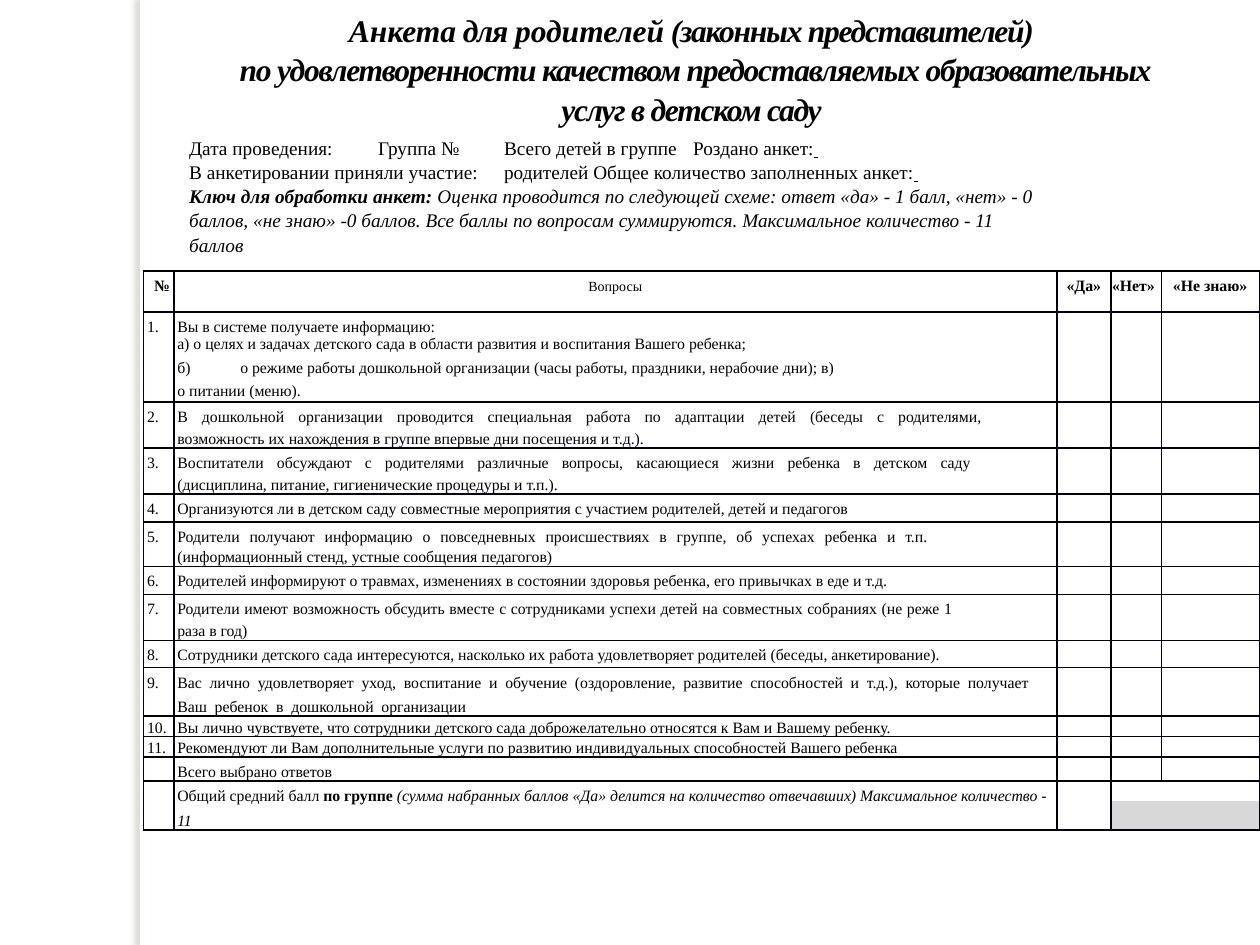
from dataclasses import dataclass

from lxml.etree import SubElement
from pptx import Presentation
from pptx.dml.color import RGBColor
from pptx.enum.shapes import MSO_SHAPE
from pptx.enum.text import MSO_ANCHOR, MSO_AUTO_SIZE, PP_ALIGN
from pptx.oxml.ns import qn
from pptx.util import Pt


@dataclass(frozen=True)
class Theme:
    font: str = "Times New Roman"
    text: str = "000000"
    paper: str = "FFFFFF"
    border: str = "000009"
    shade: str = "D8D8D8"
    shadow: str = "736F63"
    title_size: float = 18
    info_size: float = 11
    table_size: float = 9
    heading_size: float = 8


THEME = Theme()

TITLE_LINES = [
    [("Анкета", 0), (" для ", -0.7), ("родителей", 0), (" (законных представителей) ", -0.7)],
    [("по удовлетворенности качеством предоставляемых образовательных услуг в детском саду ", -0.7)],
]

# Each line: tab stops and its pieces of text with their style
INFO_LINES = [
    ([188.6, 299.5, 449.3, 589.7],
     [("Дата проведения:", ""), ("\t", "u"), ("Группа №", ""), ("\t", "u"),
      ("Всего детей в группе", ""), ("\t", "u"), ("Роздано анкет:", ""), (" \t", "u")]),
    ([294.5, 629.3],
     [("В анкетировании приняли участие:", ""), ("\t", "u"),
      ("родителей Общее количество заполненных анкет:", ""), (" \t", "u")]),
    ([],
     [("Ключ для обработки анкет: ", "bi"),
      ("Оценка проводится по следующей схеме: ответ «да» - 1 балл, «нет» - 0\v"
       "баллов, «не знаю» -0 баллов. Все баллы по вопросам суммируются. "
       "Максимальное количество - 11\vбаллов", "i")]),
]

# Heading, left indent, alignment, size
HEADINGS = [
    ("№", 6, PP_ALIGN.LEFT), ("Вопросы", 0, PP_ALIGN.CENTER), ("«Да»", 5.5, PP_ALIGN.LEFT),
    ("«Нет»", 0.5, PP_ALIGN.LEFT), ("«Не знаю»", 6.5, PP_ALIGN.LEFT),
]

# Each question: row height, then paragraphs of (text, line spacing, extra word gap)
QUESTIONS = [
    (51.4, [("Вы в системе получаете информацию:", 13.6, 0),
            ("а) о целях и задачах детского сада в области развития и воспитания Вашего ребенка;", None, 0),
            ("б)\tо режиме работы дошкольной организации (часы работы, праздники, нерабочие дни); "
             "в)\vо питании (меню).", 13.5, 0)]),
    (26.3, [("В дошкольной организации проводится специальная работа по адаптации детей "
             "(беседы с родителями,", 13.5, 5.8),
            ("возможность их нахождения в группе впервые дни посещения и т.д.).", 12.8, 0)]),
    (26.3, [("Воспитатели обсуждают с родителями различные вопросы, касающиеся жизни ребенка "
             "в детском саду", 13.6, 5.3),
            ("(дисциплина, питание, гигиенические процедуры и т.п.).", 12.5, 0)]),
    (16, [("Организуются ли в детском саду совместные мероприятия с участием родителей, "
           "детей и педагогов", 13.7, 0)]),
    (25.2, [("Родители получают информацию о повседневных происшествиях в группе, "
             "об успехах ребенка и т.п.", 13.6, 3.4),
            ("(информационный стенд, устные сообщения педагогов)", 11.8, 0)]),
    (16, [("Родителей информируют о травмах, изменениях в состоянии здоровья ребенка, "
           "его привычках в еде и т.д.", 13.6, 0)]),
    (26.3, [("Родители имеют возможность обсудить вместе с сотрудниками успехи детей "
             "на совместных собраниях (не реже 1", 13.6, 0.4),
            ("раза в год)", 12.6, 0)]),
    (15.6, [("Сотрудники детского сада интересуются, насколько их работа удовлетворяет родителей "
             "(беседы, анкетирование).", 13.6, 0)]),
    (27.6, [("Вас лично удовлетворяет уход, воспитание и обучение (оздоровление, развитие "
             "способностей и т.д.), которые получает Ваш ребенок в дошкольной организации", 13.8, 2.2)]),
    (11.8, [("Вы лично чувствуете, что сотрудники детского сада доброжелательно относятся "
             "к Вам и Вашему ребенку.", 11.7, 0)]),
    (11.7, [("Рекомендуют ли Вам дополнительные услуги по развитию индивидуальных способностей "
             "Вашего ребенка", 11.7, 0)]),
    (13.7, [("Всего выбрано ответов", 13.7, 0)]),
]
AVERAGE = [
    ("Общий средний балл ", ""), ("по группе ", "b"),
    ("(сумма набранных баллов «Да» делится на количество отвечавших) Максимальное количество - 11", "i"),
]
COLUMN_WIDTHS = [17.3, 504.7, 31, 28.8, 56.2]
HEADER_HEIGHT = 23.4
AVERAGE_HEIGHTS = [11.4, 16.4]
CELL_INDENT = 2


def color(value):
    return RGBColor.from_string(value)


def place(shape, box):
    shape.left, shape.top, shape.width, shape.height = map(Pt, box)


def format_paragraph(paragraph, size, indent=0, spacing=None, tabs=(), align=PP_ALIGN.LEFT, **style):
    paragraph.alignment = align
    if spacing:
        paragraph.line_spacing = spacing
    properties = paragraph._p.get_or_add_pPr()
    properties.set("marL", str(Pt(indent)))
    properties.set("indent", "0")
    if tabs:
        tab_list = SubElement(properties, qn("a:tabLst"))
        for position in tabs:
            SubElement(tab_list, qn("a:tab"), pos=str(Pt(position)), algn="l")
    font = paragraph.font
    font.name, font.size = THEME.font, Pt(size)
    font.color.rgb = color(THEME.text)
    for name, value in style.items():
        setattr(font, name, value)


def add_text(paragraph, text, style="", letter_gap=0):
    """Add text as runs, where a vertical tab starts a new line."""
    for number, line in enumerate(text.split("\v")):
        if number:
            paragraph.add_line_break()
        run = paragraph.add_run()
        run.text = line
        for key, name in (("b", "bold"), ("i", "italic"), ("u", "underline")):
            if key in style:
                setattr(run.font, name, True)
        if letter_gap:
            run._r.get_or_add_rPr().set("spc", str(round(letter_gap * 100)))


def add_spread_text(paragraph, text, word_gap):
    """Widen only the spaces between words."""
    if not word_gap:
        return add_text(paragraph, text)
    for number, word in enumerate(text.split(" ")):
        if number:
            add_text(paragraph, " ", letter_gap=word_gap)
        add_text(paragraph, word)


def paragraphs_for(text_frame, items):
    for number, item in enumerate(items):
        yield (text_frame.add_paragraph() if number else text_frame.paragraphs[0]), item


def add_side_bar(slide, box):
    bar = slide.shapes.add_shape(MSO_SHAPE.RECTANGLE, *map(Pt, box))
    bar.fill.solid()
    bar.fill.fore_color.rgb = color(THEME.paper)
    bar.line.fill.background()
    bar.shadow.inherit = False
    effects = bar._element.spPr.find(qn("a:effectLst"))
    shadow = SubElement(effects, qn("a:outerShdw"), blurRad=str(Pt(3)), dist=str(Pt(3)), dir="10800000")
    tone = SubElement(shadow, qn("a:srgbClr"), val=THEME.shadow)
    SubElement(tone, qn("a:alpha"), val="25000")


def fill_title(slide, box):
    title = slide.shapes.title
    place(title, box)
    frame = title.text_frame
    frame.auto_size, frame.vertical_anchor = MSO_AUTO_SIZE.NONE, MSO_ANCHOR.TOP
    for paragraph, pieces in paragraphs_for(frame, TITLE_LINES):
        format_paragraph(paragraph, THEME.title_size, spacing=1.05, align=PP_ALIGN.CENTER,
                         bold=True, italic=True)
        for text, gap in pieces:
            add_text(paragraph, text, letter_gap=gap)


def add_info(slide, box):
    frame = slide.shapes.add_textbox(*map(Pt, box)).text_frame
    frame.word_wrap = True
    for paragraph, (tabs, pieces) in paragraphs_for(frame, INFO_LINES):
        format_paragraph(paragraph, THEME.info_size, 64, 1.05, tabs)
        for text, style in pieces:
            add_text(paragraph, text, style)


def format_cell(cell, fill=None, sides="LRTB"):
    cell.margin_left = cell.margin_right = cell.margin_top = cell.margin_bottom = 0
    properties = cell._tc.get_or_add_tcPr()
    for side in "LRTB":
        line = SubElement(properties, qn(f"a:ln{side}"), w=str(Pt(1)))
        if side in sides:
            SubElement(SubElement(line, qn("a:solidFill")), qn("a:srgbClr"), val=THEME.border)
        else:
            SubElement(line, qn("a:noFill"))
    if fill:
        cell.fill.solid()
        cell.fill.fore_color.rgb = color(fill)
    else:
        cell.fill.background()
    # Small type keeps empty cells from stretching their row
    cell.text_frame.paragraphs[0]._p.get_or_add_endParaRPr().set("sz", "800")


def add_questionnaire(slide, box):
    heights = [HEADER_HEIGHT] + [height for height, _ in QUESTIONS] + AVERAGE_HEIGHTS
    frame = slide.shapes.add_table(len(heights), len(COLUMN_WIDTHS), *map(Pt, box))
    table = frame.table
    table.horz_banding = table.first_row = False
    for column, width in zip(table.columns, COLUMN_WIDTHS):
        column.width = Pt(width)
    for row, height in zip(table.rows, heights):
        row.height = Pt(height)

    # Fills and borders; the two score cells at the bottom right have no line between them
    last = len(heights) - 1
    special = {last - 1: (THEME.paper, "LRT"), last: (THEME.shade, "LRB")}
    for row in range(len(heights)):
        for column in range(len(COLUMN_WIDTHS)):
            look = special.get(row, ()) if column > 2 else ()
            format_cell(table.cell(row, column), *look)
    for column in range(3):
        table.cell(last - 1, column).merge(table.cell(last, column))
    for row in special:
        table.cell(row, 3).merge(table.cell(row, 4))

    # Header
    for column, (text, indent, align) in enumerate(HEADINGS):
        paragraph = table.cell(0, column).text_frame.paragraphs[0]
        centred = align == PP_ALIGN.CENTER
        format_paragraph(paragraph, THEME.heading_size if centred else THEME.table_size,
                         indent, Pt(13.6), align=align, bold=not centred)
        add_text(paragraph, text)

    # Numbered questions and the total, which has no number
    for row, (_, lines) in enumerate(QUESTIONS, 1):
        if row < len(QUESTIONS):
            number = table.cell(row, 0).text_frame.paragraphs[0]
            format_paragraph(number, THEME.table_size, CELL_INDENT, Pt(lines[0][1]))
            add_text(number, f"{row}.")
        for paragraph, (text, spacing, gap) in paragraphs_for(table.cell(row, 1).text_frame, lines):
            format_paragraph(paragraph, THEME.table_size, CELL_INDENT, spacing and Pt(spacing),
                             [23] if "\t" in text else ())
            add_spread_text(paragraph, text, gap)

    # Average score
    paragraph = table.cell(last - 1, 1).text_frame.paragraphs[0]
    format_paragraph(paragraph, THEME.table_size, CELL_INDENT, Pt(13.8))
    for text, style in AVERAGE:
        add_text(paragraph, text, style)


def main():
    presentation = Presentation()
    presentation.slide_width, presentation.slide_height = Pt(720), Pt(540)
    slide = presentation.slides.add_slide(presentation.slide_layouts[5])
    add_side_bar(slide, (80, 0, 5.8, 540))
    fill_title(slide, (111, 1.4, 572, 73))
    add_info(slide, (37, 73.4, 607, 87))
    add_questionnaire(slide, (82, 154.8, 638, 325))
    presentation.save("out.pptx")


if __name__ == "__main__":
    main()
